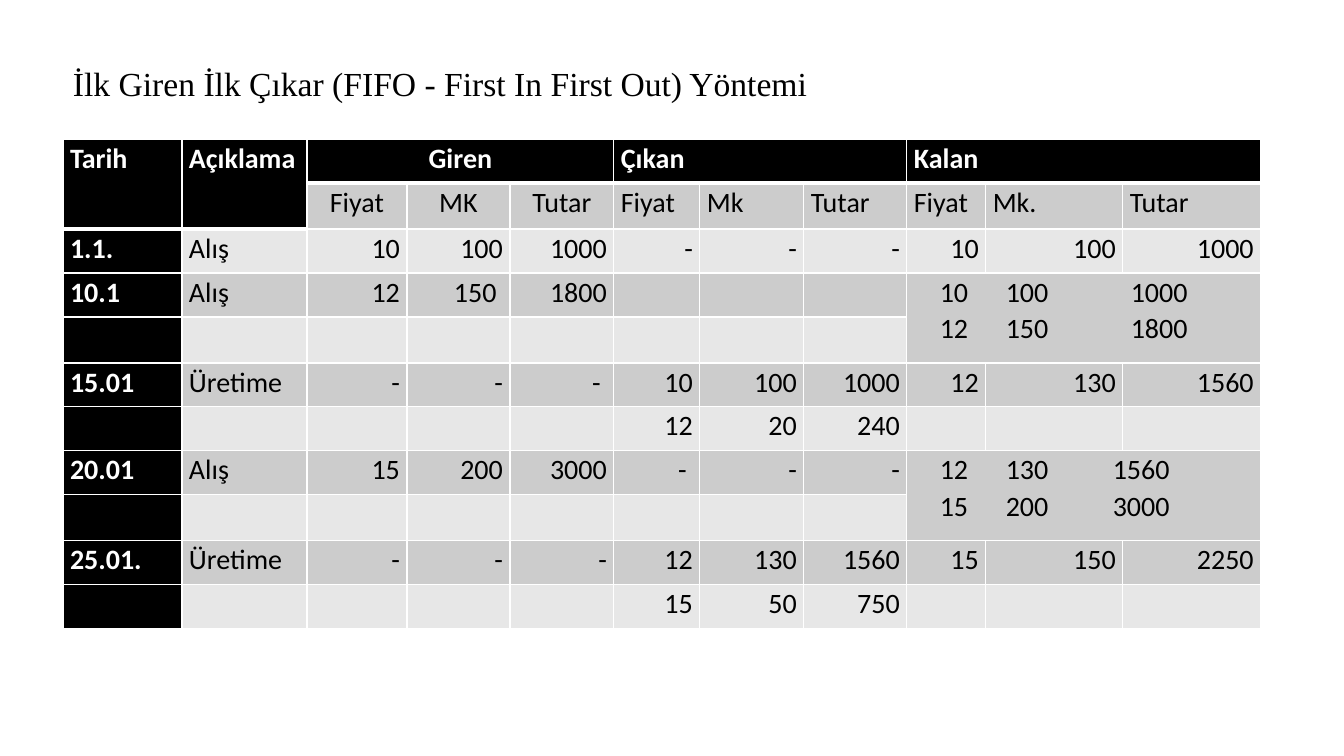
from lxml.etree import SubElement
from pptx import Presentation
from pptx.dml.color import RGBColor
from pptx.enum.text import PP_ALIGN
from pptx.oxml.ns import qn
from pptx.util import Pt

THEME = {
    "black": "000000", "white": "FFFFFF", "dark": "CCCCCC", "light": "E7E7E7",
    "serif": "Times New Roman", "sans": "Calibri", "title": 24, "body": 20,
}


def px(count):
    return round(count * 914400 / 100.8)


def write(para, text, font, size, tint, bold=False):
    run = para.add_run()
    run.text = text
    run.font.name, run.font.size, run.font.bold = font, Pt(size), bold
    run.font.color.rgb = RGBColor.from_string(THEME[tint])


deck = Presentation()
deck.slide_width, deck.slide_height = px(1344), px(756)
slide = deck.slides.add_slide(deck.slide_layouts[6])

# Title
title = slide.shapes.add_textbox(px(63), px(58), px(1174), px(50)).text_frame
title.word_wrap = True
write(title.paragraphs[0], "İlk Giren İlk Çıkar (FIFO - First In First Out) Yöntemi",
      THEME["serif"], THEME["title"], "black")

# Stock ledger: date, note, then price, amount and total for in, out and left
ledger = [
    ["Tarih", "Açıklama", "Giren", "", "", "Çıkan", "", "", "Kalan", "", ""],
    ["", "", "Fiyat", "MK", "Tutar", "Fiyat", "Mk", "Tutar", "Fiyat", "Mk.", "Tutar"],
    ["1.1.", "Alış", "10", "100", "1000", "-", "-", "-", "10", "100", "1000"],
    ["10.1", "Alış", "12", "150 ", "1800", "", "", "",
     "\t10\t100\t1000\n\t12\t150\t1800", "", ""],
    [""] * 11,
    ["15.01", "Üretime", "-", "-", "- ", "10", "100", "1000", "12", "130", "1560"],
    ["", "", "", "", "", "12", "20", "240", "", "", ""],
    ["20.01", "Alış", "15", "200", "3000", "- ", "-", "-",
     "\t12\t130\t1560\n\t15\t200\t3000", "", ""],
    [""] * 11,
    ["25.01.", "Üretime", "-", "-", "-", "12", "130", "1560", "15", "150", "2250"],
    ["", "", "", "", "", "15", "50", "750", "", "", ""],
]
widths = [119, 125, 100, 103, 104, 86, 104, 103, 79, 137, 138]
heights = [44, 46, 44, 44, 46, 44, 44, 44, 46, 44, 44]
stops = {3: (26, 92, 217), 7: (26, 92, 199)}  # tab stops of the two-line balances

table = slide.shapes.add_table(len(heights), len(widths), px(63), px(139),
                               px(sum(widths)), px(sum(heights))).table
for col, width in zip(table.columns, widths):
    col.width = px(width)
for line, height in zip(table.rows, heights):
    line.height = px(height)

# Cells: borders, fill and text
for row, texts in enumerate(ledger):
    for col, text in enumerate(texts):
        cell = table.cell(row, col)
        cell.margin_left = cell.margin_right = px(7)
        cell.margin_top = cell.margin_bottom = 0

        thick = set()
        if row == 0 or row == 1 and col < 2:
            thick.add("B")
        if row == 1 or row == 2 and col < 2:
            thick.add("T")
        props = cell._tc.get_or_add_tcPr()
        for side in "LRTB":
            edge = SubElement(props, qn("a:ln" + side), w=str(Pt(3 if side in thick else 1)))
            paint = SubElement(edge, qn("a:solidFill"))
            SubElement(paint, qn("a:srgbClr"), val=THEME["white"])

        head = row == 0 or col == 0
        shade = "black" if head or row == 1 and col < 2 else "dark" if row % 2 else "light"
        cell.fill.solid()
        cell.fill.fore_color.rgb = RGBColor.from_string(THEME[shade])

        frame = cell.text_frame
        for order, part in enumerate(text.split("\n")):
            para = frame.add_paragraph() if order else frame.paragraphs[0]
            para.line_spacing = 1.07
            if row < 2 and 2 <= col <= 4:
                para.alignment = PP_ALIGN.CENTER
            elif row < 2 or col < 2 or "\t" in part:
                para.alignment = PP_ALIGN.LEFT
            else:
                para.alignment = PP_ALIGN.RIGHT
            if "\t" in part:
                tabs = SubElement(para._p.get_or_add_pPr(), qn("a:tabLst"))
                for stop in stops[row]:
                    SubElement(tabs, qn("a:tab"), pos=str(px(stop)), algn="l")
            if part:
                write(para, part, THEME["sans"], THEME["body"],
                      "white" if head else "black", head)
            else:
                para.font.size = Pt(THEME["body"])

# Merged heads and balances
for col in (0, 1):
    table.cell(0, col).merge(table.cell(1, col))
for col in (2, 5, 8):
    table.cell(0, col).merge(table.cell(0, col + 2))
for row in stops:
    table.cell(row, 8).merge(table.cell(row + 1, 10))

deck.save("out.pptx")
